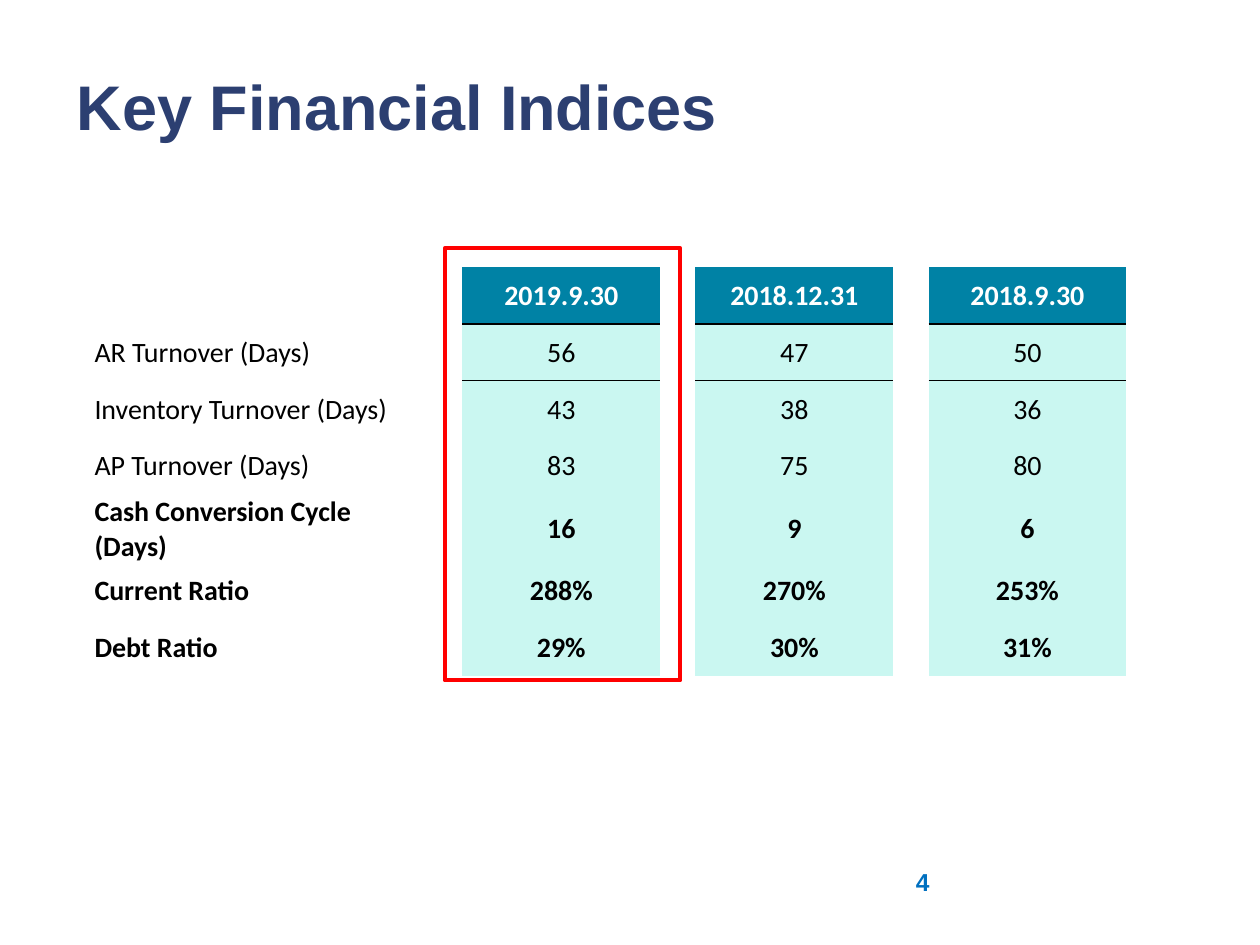
from dataclasses import dataclass

from lxml.etree import SubElement
from pptx import Presentation
from pptx.dml.color import RGBColor
from pptx.enum.shapes import MSO_SHAPE
from pptx.enum.text import MSO_ANCHOR, PP_ALIGN
from pptx.oxml.ns import qn
from pptx.util import Inches, Pt


@dataclass(frozen=True)
class Theme:
    """Colours, fonts and type sizes of the deck."""

    title: str = "2C3F71"
    number: str = "0070C0"
    header: str = "0082A5"
    header_text: str = "FFFFFF"
    body: str = "CAF7F1"
    text: str = "000000"
    highlight: str = "FF0000"
    heading_font: str = "Arial"
    table_font: str = "Calibri"
    title_size: int = 36
    table_size: int = 16
    number_size: int = 14


NO_GRID_STYLE = "{2D5ABB26-0587-4C30-8999-92F81FD0307C}"
COLUMN_WIDTHS = [2.68, 0.25, 1.57, 0.28, 1.57, 0.28, 1.57]
ROW_HEIGHT = 0.45
FIRST_BOLD_ROW = 4
INDICES = [
    ["", "2019.9.30", "2018.12.31", "2018.9.30"],
    ["AR Turnover (Days)", "56", "47", "50"],
    ["Inventory Turnover (Days)", "43", "38", "36"],
    ["AP Turnover (Days)", "83", "75", "80"],
    ["Cash Conversion Cycle (Days)", "16", "9", "6"],
    ["Current Ratio", "288%", "270%", "253%"],
    ["Debt Ratio", "29%", "30%", "31%"],
]


class SlideBuilder:
    """Draws each kind of element on one slide in one theme."""

    def __init__(self, slide, theme):
        self.slide = slide
        self.theme = theme

    def add_text(self, frame, text, font, size, color, bold=True, align=PP_ALIGN.LEFT):
        """Add one styled run to the first paragraph of a frame."""
        para = frame.paragraphs[0]
        para.alignment = align
        span = para.add_run()
        span.text = text
        span.font.name = font
        span.font.size = Pt(size)
        span.font.bold = bold
        span.font.color.rgb = RGBColor.from_string(color)

    def title(self, text, left, top, width, height):
        """Place and fill the title placeholder."""
        box = self.slide.shapes.title
        box.left, box.top = Inches(left), Inches(top)
        box.width, box.height = Inches(width), Inches(height)
        box.text_frame.vertical_anchor = MSO_ANCHOR.MIDDLE
        self.add_text(box.text_frame, text, self.theme.heading_font,
                      self.theme.title_size, self.theme.title)

    def page_number(self, text, left, top, width, height):
        """Add the page number."""
        box = self.slide.shapes.add_textbox(
            Inches(left), Inches(top), Inches(width), Inches(height))
        box.text_frame.word_wrap = True
        self.add_text(box.text_frame, text, self.theme.heading_font,
                      self.theme.number_size, self.theme.number)

    def border(self, cell, side):
        """Rule one side of a cell."""
        line = SubElement(cell._tc.get_or_add_tcPr(), qn(f"a:{side}"), w=str(Pt(1)))
        fill = SubElement(line, qn("a:solidFill"))
        SubElement(fill, qn("a:srgbClr"), val=self.theme.text)

    def cell(self, cell, text, row, is_value):
        """Style and fill one label, header or value cell."""
        is_header = row == 0
        if is_value and row < 2:
            self.border(cell, "lnB" if is_header else "lnT")
        if is_value:
            cell.fill.solid()
            cell.fill.fore_color.rgb = RGBColor.from_string(
                self.theme.header if is_header else self.theme.body)
        else:
            cell.fill.background()
        if text:
            cell.vertical_anchor = MSO_ANCHOR.MIDDLE
            cell.margin_left = cell.margin_right = cell.margin_top = Inches(0.01)
            cell.margin_bottom = 0
            self.add_text(cell.text_frame, text, self.theme.table_font,
                          self.theme.table_size,
                          self.theme.header_text if is_header else self.theme.text,
                          bold=is_header or row >= FIRST_BOLD_ROW,
                          align=PP_ALIGN.CENTER if is_value else PP_ALIGN.LEFT)

    def table(self, rows, widths, left, top):
        """Add a table whose odd columns are gaps between the data columns."""
        table = self.slide.shapes.add_table(
            len(rows), len(widths), Inches(left), Inches(top),
            Inches(sum(widths)), Inches(ROW_HEIGHT * len(rows))).table
        table.first_row = table.horz_banding = False
        table._tbl.tblPr.find(qn("a:tableStyleId")).text = NO_GRID_STYLE
        for column, width in zip(table.columns, widths):
            column.width = Inches(width)
        for r, values in enumerate(rows):
            table.rows[r].height = Inches(ROW_HEIGHT)
            for c in range(len(widths)):
                is_gap = c % 2 == 1
                self.cell(table.cell(r, c), "" if is_gap else values[c // 2],
                          r, is_value=c > 0 and not is_gap)

    def highlight(self, left, top, width, height):
        """Frame an area with an unfilled rectangle."""
        frame = self.slide.shapes.add_shape(
            MSO_SHAPE.RECTANGLE, Inches(left), Inches(top), Inches(width), Inches(height))
        frame.shadow.inherit = False
        frame.fill.background()
        frame.line.color.rgb = RGBColor.from_string(self.theme.highlight)
        frame.line.width = Pt(2.25)


def main():
    """Build and save the deck."""
    deck = Presentation()
    deck.slide_width, deck.slide_height = Inches(10), Inches(7.5)
    builder = SlideBuilder(deck.slides.add_slide(deck.slide_layouts[5]), Theme())
    builder.page_number("4", 7.17, 6.83, 2.33, 0.52)
    builder.title("Key Financial Indices", 0.51, 0.21, 8.58, 1.25)
    builder.table(INDICES, COLUMN_WIDTHS, 0.74, 2.12)
    builder.highlight(3.53, 1.97, 1.87, 3.43)
    deck.save("out.pptx")


if __name__ == "__main__":
    main()
